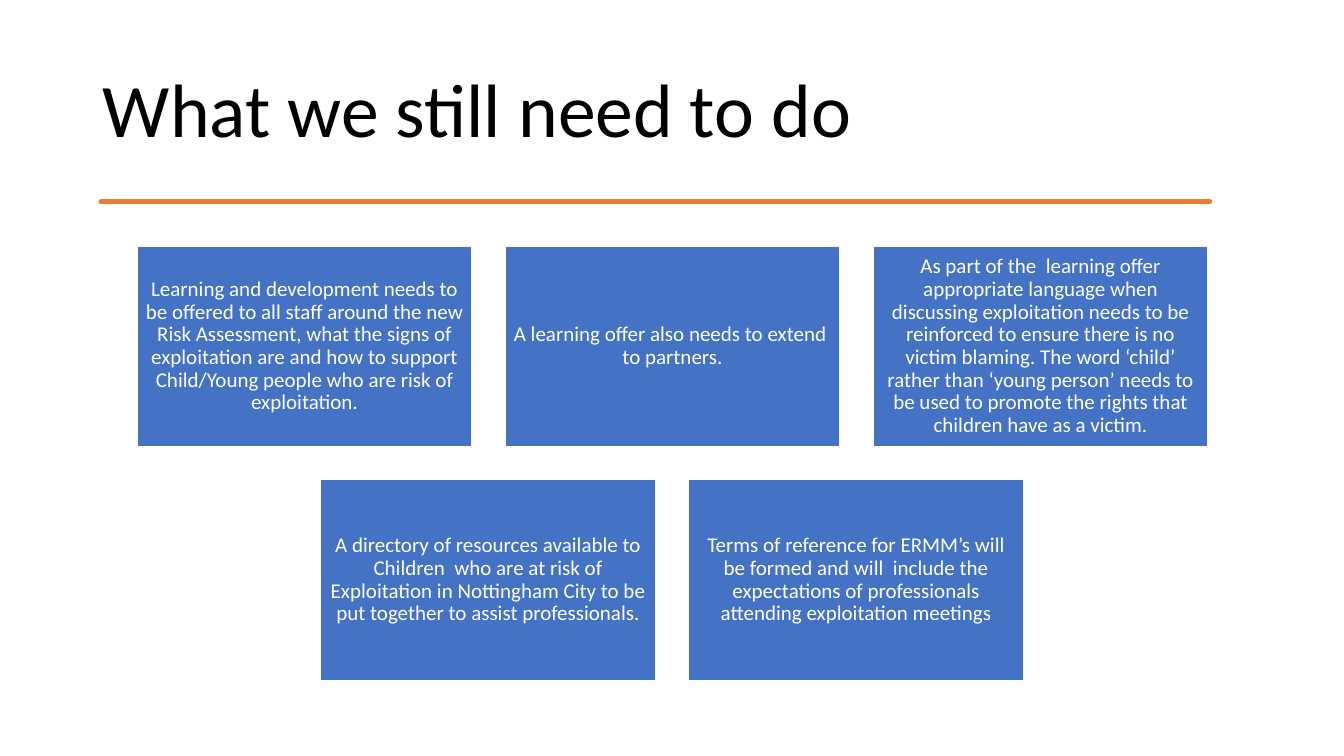
from lxml.etree import SubElement
from pptx import Presentation
from pptx.dml.color import RGBColor
from pptx.enum.shapes import MSO_SHAPE as Shape
from pptx.enum.text import MSO_ANCHOR as Anchor, MSO_AUTO_SIZE as Fit, PP_ALIGN as Align
from pptx.oxml.ns import qn
from pptx.util import Inches, Pt


def tint(color, code):
    color.rgb = RGBColor.from_string(code)


def write(frame, text, size, code, align):
    frame.text = text
    frame.word_wrap = True
    frame.auto_size = Fit.NONE
    frame.vertical_anchor = Anchor.MIDDLE
    para = frame.paragraphs[0]
    para.alignment = align
    para.line_spacing = 0.9
    font = para.runs[0].font
    font.name = "Calibri"
    font.size = Pt(size)
    tint(font.color, code)


deck = Presentation()
deck.slide_width = Inches(13.33)
deck.slide_height = Inches(7.5)
slide = deck.slides.add_slide(deck.slide_layouts[5])

title = slide.shapes.title
title.left, title.top = Inches(0.92), Inches(0.4)
title.width, title.height = Inches(11.5), Inches(1.45)
write(title.text_frame, "What we still need to do", 54, "000000", Align.LEFT)

knots = [
    (0.92, 2.04, 2.06), (1.45, 2.03, 2.07), (1.95, 2.04, 2.06),
    (2.35, 2.04, 2.06), (2.75, 2.04, 2.07), (3.3, 2.04, 2.05),
    (3.65, 2.03, 2.06), (4.0, 2.04, 2.08), (4.6, 2.04, 2.05),
    (5.2, 2.04, 2.07), (5.75, 2.05, 2.07), (6.1, 2.03, 2.06),
    (6.9, 2.02, 2.07), (7.3, 2.04, 2.06), (7.75, 2.05, 2.06),
    (8.2, 2.03, 2.05), (8.6, 2.04, 2.08), (9.35, 2.02, 2.06),
    (10.2, 2.04, 2.06), (10.7, 2.04, 2.07), (11.3, 2.03, 2.08),
    (11.75, 2.04, 2.05), (12.32, 2.04, 2.06),
]
edge = [(x, top) for x, top, low in knots]
edge += [(x, low) for x, top, low in reversed(knots)]
pen = slide.shapes.build_freeform(*edge[0], scale=Inches(1))
pen.add_line_segments(edge[1:], close=True)
rule = pen.convert_to_shape()
rule.shadow.inherit = False
rule.fill.solid()
tint(rule.fill.fore_color, "ED7D31")
tint(rule.line.color, "ED7D31")
rule.line.width = Pt(3.25)
SubElement(rule.line._get_or_add_ln(), qn("a:round"))

rows = [
    (1.36, 2.44, [
        "Learning and development needs to be offered to all staff around the new Risk Assessment, what the signs of exploitation are and how to support Child/Young people who are risk of exploitation.",
        "A learning offer also needs to extend  to partners.",
        "As part of the  learning offer appropriate language when discussing exploitation needs to be reinforced to ensure there is no victim blaming. The word ‘child’ rather than ‘young person’ needs to be used to promote the rights that children have as a victim.",
    ]),
    (3.18, 4.76, [
        "A directory of resources available to Children  who are at risk of Exploitation in Nottingham City to be put together to assist professionals.",
        "Terms of reference for ERMM’s will be formed and will  include the expectations of professionals attending exploitation meetings",
    ]),
]
for left, top, texts in rows:
    for col, text in enumerate(texts):
        card = slide.shapes.add_shape(
            Shape.RECTANGLE, Inches(left + col * 3.65), Inches(top), Inches(3.32), Inches(1.99))
        card.shadow.inherit = False
        card.fill.solid()
        tint(card.fill.fore_color, "4472C4")
        tint(card.line.color, "FFFFFF")
        card.line.width = Pt(1)
        frame = card.text_frame
        frame.margin_left = frame.margin_right = Inches(0.06)
        frame.margin_top = frame.margin_bottom = Inches(0.06)
        write(frame, text, 15, "FFFFFF", Align.CENTER)

deck.save("out.pptx")
